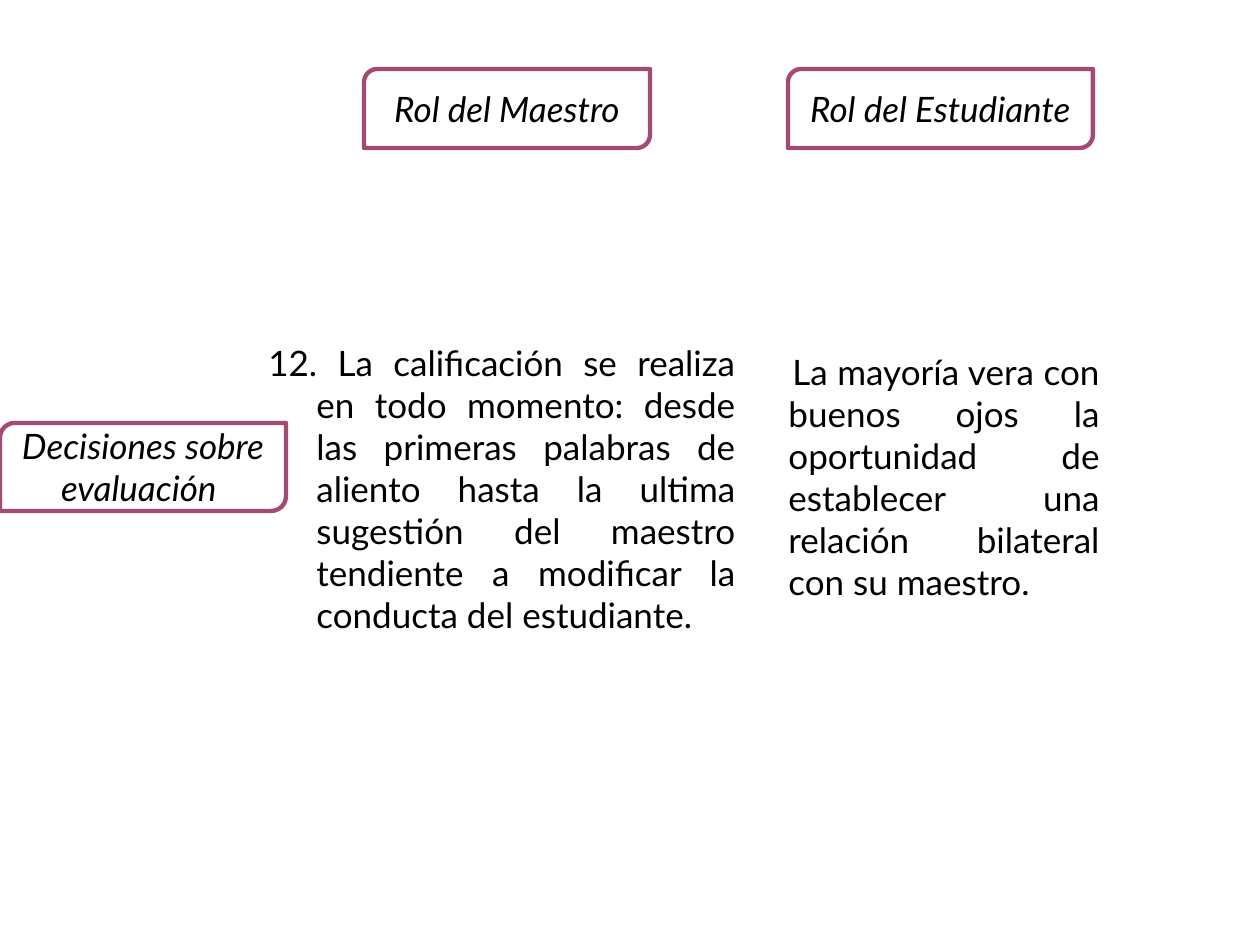
from pptx import Presentation
from pptx.dml.color import RGBColor
from pptx.enum.shapes import MSO_SHAPE
from pptx.enum.text import MSO_ANCHOR, PP_ALIGN
from pptx.util import Emu, Pt

PIXELS_PER_INCH = 126
COLORS = {"text": "000000", "border": "A34B73"}
LABEL_FONT = {"name": "Lato", "size": Pt(20), "italic": True}
BODY_FONT = {"name": "Lato", "size": Pt(20), "italic": False}


def px(length):
    """Turn a length in px into EMU."""
    return Emu(round(length * 914400 / PIXELS_PER_INCH))


class RoleSlide:
    """Hold the style and the current slide."""

    def __init__(self, presentation):
        """Add a blank slide to the presentation."""
        self.slide = presentation.slides.add_slide(presentation.slide_layouts[6])

    def add_text(self, shape, text, font_format, alignment, anchor):
        """Put one formatted paragraph into a shape."""
        frame = shape.text_frame
        frame.word_wrap = True
        frame.vertical_anchor = anchor
        paragraph = frame.paragraphs[0]
        paragraph.alignment = alignment
        run = paragraph.add_run()
        run.text = text
        for name, value in font_format.items():
            setattr(run.font, name, value)
        run.font.color.rgb = RGBColor.from_string(COLORS["text"])
        return paragraph

    def label(self, text, left, top, width, height):
        """Add an outlined label with two rounded corners."""
        shape = self.slide.shapes.add_shape(
            MSO_SHAPE.ROUND_2_DIAG_RECTANGLE, px(left), px(top), px(width), px(height))
        shape.shadow.inherit = False
        shape.fill.background()
        shape.line.color.rgb = RGBColor.from_string(COLORS["border"])
        shape.line.width = Pt(2.5)
        self.add_text(shape, text, LABEL_FONT, PP_ALIGN.CENTER, MSO_ANCHOR.MIDDLE)

    def body(self, text, left, top, width, height, first_indent):
        """Add a justified text with its own first-line indent."""
        shape = self.slide.shapes.add_textbox(px(left), px(top), px(width), px(height))
        paragraph = self.add_text(shape, text, BODY_FONT, PP_ALIGN.JUSTIFY, MSO_ANCHOR.TOP)
        properties = paragraph._p.get_or_add_pPr()
        properties.set("marL", str(px(48)))
        properties.set("indent", str(px(first_indent)))


def main():
    """Build and save the slide."""
    presentation = Presentation()
    presentation.slide_width = px(1260)
    presentation.slide_height = px(945)
    role_slide = RoleSlide(presentation)
    role_slide.label("Decisiones sobre evaluación ", 0, 423, 286, 88)
    role_slide.label("Rol del Maestro", 364, 69, 286, 79)
    role_slide.label("Rol del Estudiante", 788, 69, 305, 79)
    role_slide.body(
        "12. La calificación se realiza en todo momento: desde las primeras palabras "
        "de aliento hasta la ultima sugestión del maestro tendiente a modificar la "
        "conducta del estudiante.", 256, 335, 492, 310, -48)
    role_slide.body(
        "La mayoría vera con buenos ojos la oportunidad de establecer una relación "
        "bilateral con su maestro.", 728, 344, 384, 267, 4)
    presentation.save("out.pptx")


if __name__ == "__main__":
    main()
